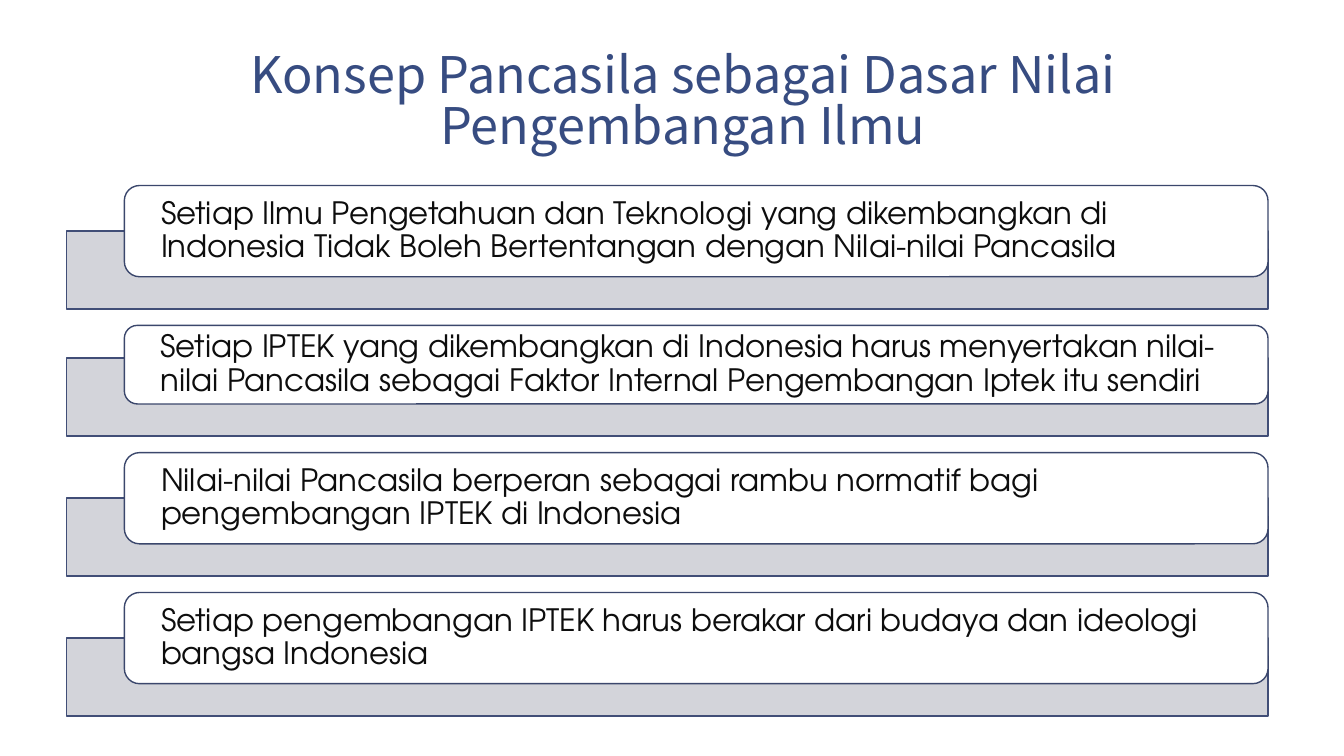
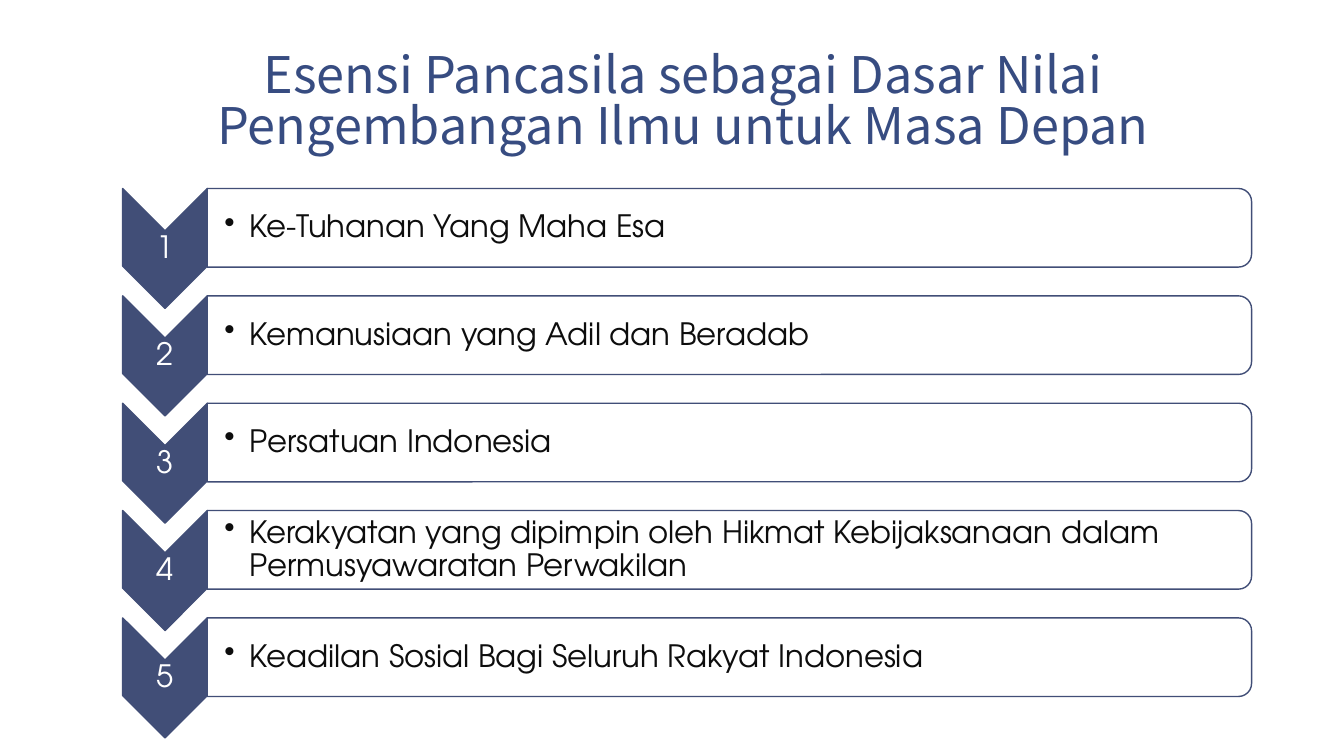
from lxml.etree import SubElement
from pptx import Presentation
from pptx.dml.color import RGBColor
from pptx.enum.shapes import MSO_SHAPE as Preset
from pptx.enum.text import MSO_ANCHOR as Anchor, MSO_AUTO_SIZE as AutoSize, PP_ALIGN as Align
from pptx.oxml.ns import qn
from pptx.util import Inches, Pt

WHITE = RGBColor(0xFF, 0xFF, 0xFF)
INK = RGBColor(0x0D, 0x0D, 0x0D)
TITLE_BLUE = RGBColor(0x37, 0x4C, 0x81)
NAVY = RGBColor(0x41, 0x4E, 0x77)
DARK_NAVY = RGBColor(0x3B, 0x47, 0x6C)
BAND_GREY = RGBColor(0xCF, 0xD0, 0xD6)

TITLE_FONT = "Noto Sans CJK SC"
BODY_FONT = "TeX Gyre Adventor"
COLUMNS, ROWS = 40, 30
TITLE_BOX = (3.66, 0.32, 33.33, 6.12)

PRINCIPLES = [
    ("Setiap Ilmu Pengetahuan dan Teknologi yang dikembangkan di Indonesia "
     "Tidak Boleh Bertentangan dengan Nilai-nilai Pancasila", 3.62),
    ("Setiap IPTEK yang dikembangkan di Indonesia harus menyertakan nilai-nilai "
     "Pancasila sebagai Faktor Internal Pengembangan Iptek itu sendiri", 3.12),
    ("Nilai-nilai Pancasila berperan sebagai rambu normatif bagi pengembangan "
     "IPTEK di Indonesia", 3.62),
    ("Setiap pengembangan IPTEK harus berakar dari budaya dan ideologi bangsa "
     "Indonesia", 3.62),
]
PRECEPTS = [
    "Ke-Tuhanan Yang Maha Esa",
    "Kemanusiaan yang Adil dan Beradab",
    "Persatuan Indonesia",
    "Kerakyatan yang dipimpin oleh Hikmat Kebijaksanaan dalam Permusyawaratan Perwakilan",
    "Keadilan Sosial Bagi Seluruh Rakyat Indonesia",
]


def write(shape, text, font=BODY_FONT, size=22, color=INK, align=Align.LEFT,
          anchor=Anchor.MIDDLE, spacing=0.9, insets=(0.02, 0.02), bullet=None):
    """Put one formatted paragraph into a shape."""
    frame = shape.text_frame
    frame.word_wrap = True
    frame.auto_size = AutoSize.NONE
    frame.vertical_anchor = anchor
    frame.margin_left = frame.margin_right = Inches(insets[0])
    frame.margin_top = frame.margin_bottom = Inches(insets[1])
    paragraph = frame.paragraphs[0]
    paragraph.text = text
    paragraph.alignment = align
    paragraph.line_spacing = spacing
    if bullet:
        properties = paragraph._p.get_or_add_pPr()
        properties.set("marL", str(Inches(0.25)))
        properties.set("indent", str(-Inches(0.25)))
        SubElement(properties, qn("a:buChar")).set("char", bullet)
    paragraph.font.name = font
    paragraph.font.size = Pt(size)
    paragraph.font.color.rgb = color


class Deck:
    """Holds the presentation, its grid and the current slide."""

    def __init__(self):
        self.presentation = Presentation()
        self.presentation.slide_width = Inches(13.33)
        self.presentation.slide_height = Inches(7.5)
        self.column = self.presentation.slide_width / COLUMNS
        self.row = self.presentation.slide_height / ROWS
        self.slide = None

    def place(self, left, top, width, height):
        """Turn columns and rows into lengths."""
        return (round(left * self.column), round(top * self.row),
                round(width * self.column), round(height * self.row))

    def add_slide(self, title):
        """Start a title-only slide."""
        layout = self.presentation.slide_layouts[5]
        self.slide = self.presentation.slides.add_slide(layout)
        shape = self.slide.shapes.title
        shape.left, shape.top, shape.width, shape.height = self.place(*TITLE_BOX)
        write(shape, title, font=TITLE_FONT, size=36, color=TITLE_BLUE, align=Align.CENTER,
              anchor=Anchor.BOTTOM, spacing=0.85, insets=(0.13, 0.07))

    def add_shape(self, preset, box, fill, line=NAVY, opacity=100, turned=False):
        """Draw a preset shape, turned a quarter inside its box if asked."""
        left, top, width, height = self.place(*box)
        if turned:
            left += (width - height) // 2
            top += (height - width) // 2
            width, height = height, width
        shape = self.slide.shapes.add_shape(preset, left, top, width, height)
        shape.rotation = 90 if turned else 0
        shape.shadow.inherit = False
        shape.fill.solid()
        shape.fill.fore_color.rgb = fill
        if opacity < 100:
            color = shape._element.spPr.find(".//" + qn("a:srgbClr"))
            SubElement(color, qn("a:alpha")).set("val", str(opacity * 1000))
        shape.line.color.rgb = line
        shape.line.width = Pt(1)
        return shape

    def add_text(self, box, text, **style):
        """Add a text box."""
        write(self.slide.shapes.add_textbox(*self.place(*box)), text, **style)

    def add_card(self, top, height, text):
        """Add a card over a grey band and return the band's bottom."""
        bottom = top + height + 1.28
        self.add_shape(Preset.RECTANGLE, (1.98, bottom - 3.1, 35.76, 3.1),
                       BAND_GREY, opacity=90)
        card = self.add_shape(Preset.ROUNDED_RECTANGLE, (3.7, top, 34.04, height),
                              WHITE, line=DARK_NAVY)
        write(card, text, insets=(0.32, 0))
        return bottom

    def add_step(self, top, number, text):
        """Add a numbered chevron with its bar."""
        chevron_box = (3.65, top, 2.52, 4.76)
        bar_box = (6.17, top, 31.08, 3.12)
        self.add_shape(Preset.CHEVRON, chevron_box, NAVY, turned=True)
        self.add_text(chevron_box, str(number), color=WHITE, align=Align.CENTER)
        self.add_shape(Preset.ROUND_2_SAME_RECTANGLE, bar_box, WHITE, turned=True)
        self.add_text(bar_box, text, insets=(0.17, 0.02), bullet="•")


def main():
    """Build both slides and save them."""
    deck = Deck()
    deck.add_slide("Konsep Pancasila sebagai Dasar Nilai Pengembangan Ilmu")
    top = 7.36
    for text, height in PRINCIPLES:
        top = deck.add_card(top, height, text) + 0.65

    deck.add_slide("Esensi Pancasila sebagai Dasar Nilai Pengembangan Ilmu untuk Masa Depan")
    for index, text in enumerate(PRECEPTS):
        deck.add_step(7.48 + index * 4.26, index + 1, text)
    deck.presentation.save("out.pptx")


if __name__ == "__main__":
    main()
